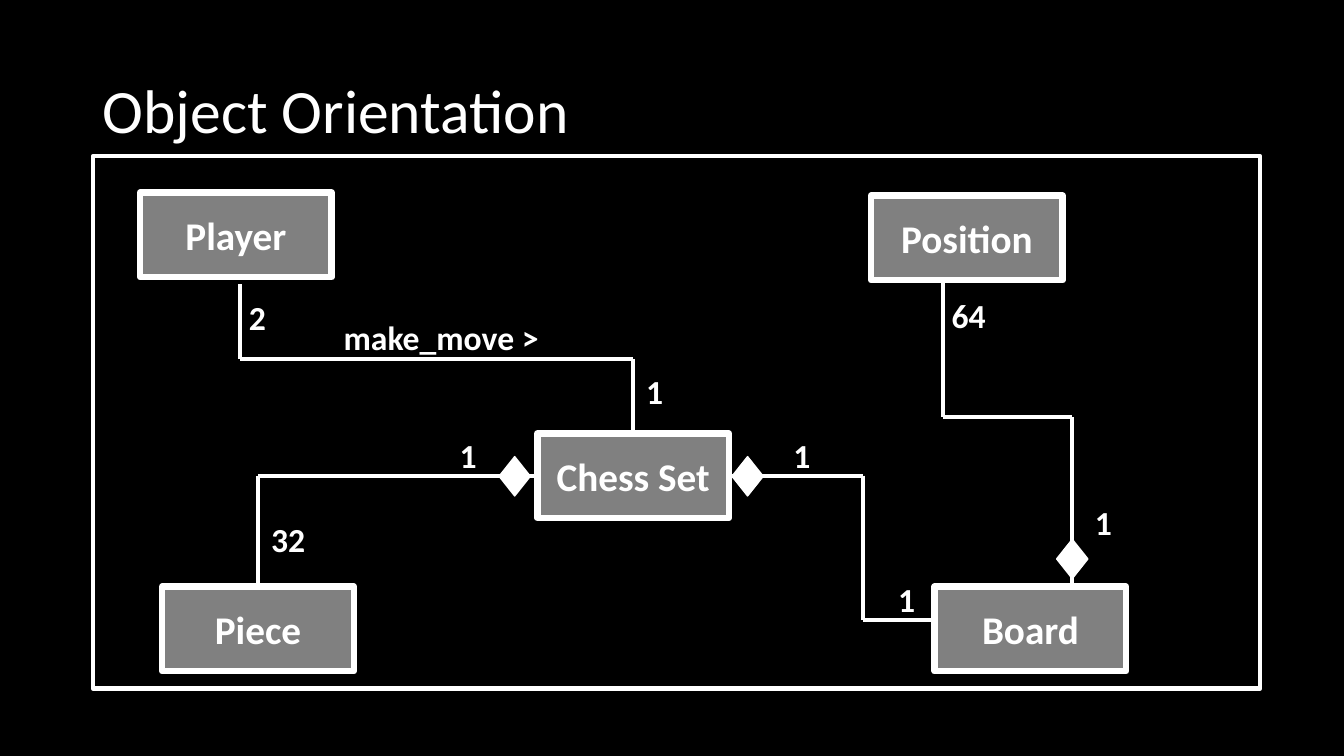
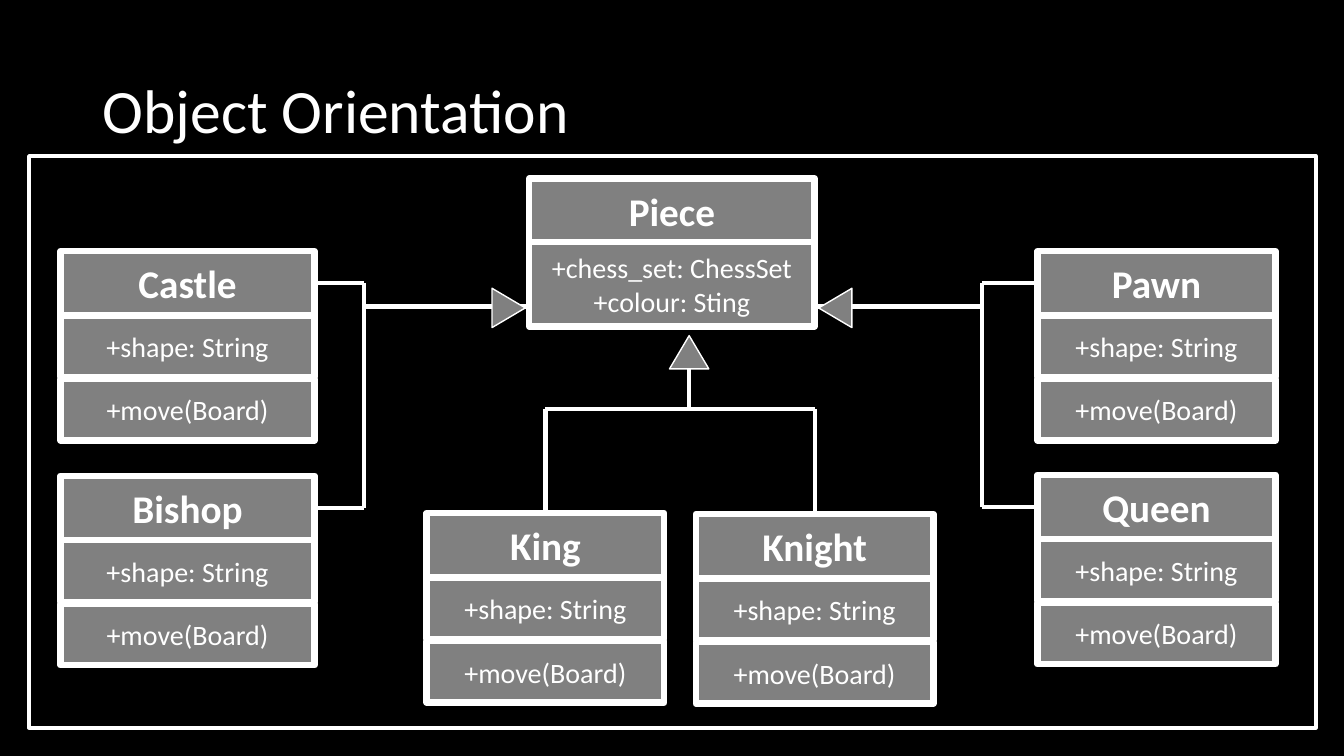
from lxml import etree
from pptx import Presentation
from pptx.dml.color import RGBColor
from pptx.enum.shapes import MSO_CONNECTOR, MSO_SHAPE as SHAPE
from pptx.enum.text import MSO_ANCHOR as ANCHOR, MSO_AUTO_SIZE as AUTO, PP_ALIGN as ALIGN
from pptx.oxml.ns import qn
from pptx.util import Inches, Pt

COLORS = {"back": "000000", "box": "808080", "ink": "FFFFFF"}
RGB = {name: RGBColor.from_string(code) for name, code in COLORS.items()}
FONT = "Calibri"
TOP, LEFT, BOTTOM, RIGHT = range(4)  # connection sites of a rectangle


def add_item(s, at, text="", shape=None, fill=None, line=4.5, size=28, bold=True, rotation=0):
    """Add a preset shape, or a plain label when no shape is given."""
    at = [Inches(v) for v in at]
    if shape is None:
        sp = s.shapes.add_textbox(*at)
    else:
        sp = s.shapes.add_shape(shape, *at)
        sp.shadow.inherit = False
        sp.rotation = rotation
        sp.line.color.rgb = RGB["ink"]
        sp.line.width = Pt(line)
        if fill:
            sp.fill.solid()
            sp.fill.fore_color.rgb = RGB[fill]
        else:
            sp.fill.background()
    if text:
        tf = sp.text_frame
        tf.word_wrap = shape is not None
        tf.auto_size = AUTO.NONE if shape else AUTO.SHAPE_TO_FIT_TEXT
        tf.vertical_anchor = ANCHOR.MIDDLE if shape else ANCHOR.TOP
        tf.text = text
        for p in tf.paragraphs:
            p.alignment = ALIGN.CENTER if shape else ALIGN.LEFT
            p.font.name, p.font.size, p.font.bold = FONT, Pt(size), bold
            p.font.color.rgb = RGB["ink"]
    return sp


def add_route(s, points, begin=None, end=None):
    """Join the points with straight lines; begin and end are (shape, site) pairs."""
    segments = []
    for (x1, y1), (x2, y2) in zip(points, points[1:]):
        c = s.shapes.add_connector(MSO_CONNECTOR.STRAIGHT, Inches(x1), Inches(y1),
                                   Inches(x2), Inches(y2))
        c.line.color.rgb = RGB["ink"]
        c.line.width = Pt(3)
        etree.SubElement(c._element.spPr, qn("a:effectLst"))
        segments.append(c)
    if begin:
        segments[0].begin_connect(*begin)
    if end:
        segments[-1].end_connect(*end)


prs = Presentation()
prs.slide_width, prs.slide_height = Inches(13.33), Inches(7.5)
background = prs.slide_master.background.fill
background.solid()
background.fore_color.rgb = RGB["back"]

# Title and frame on both slides
slides = []
for frame in [(0.92, 1.55, 11.58, 5.28), (0.29, 1.55, 12.76, 5.67)]:
    s = prs.slides.add_slide(prs.slide_layouts[5])
    title = s.shapes.title
    title.left, title.top = Inches(0.92), Inches(0.4)
    title.width, title.height = Inches(11.5), Inches(1.45)
    tf = title.text_frame
    tf.text = "Object Orientation"
    tf.auto_size = AUTO.NONE
    tf.vertical_anchor = ANCHOR.MIDDLE
    p = tf.paragraphs[0]
    p.alignment, p.line_spacing = ALIGN.LEFT, 0.9
    p.font.name, p.font.size = FONT, Pt(44)
    p.font.color.rgb = RGB["ink"]
    add_item(s, frame, shape=SHAPE.RECTANGLE, line=3)
    slides.append(s)
associations, inheritance = slides

# Slide 1: associations between the classes
s = associations
boxes = {}
for name, x, y in [("Player", 1.39, 1.91), ("Chess Set", 5.33, 4.3), ("Piece", 1.61, 5.82),
                   ("Board", 9.27, 5.82), ("Position", 8.64, 1.94)]:
    boxes[name] = add_item(s, (x, y, 1.9, 0.84), name, SHAPE.RECTANGLE, "box")

chess_set = boxes["Chess Set"]
add_route(s, [(2.38, 2.82), (2.38, 3.56), (6.28, 3.56), (6.28, 4.3)], end=(chess_set, TOP))
add_route(s, [(5.33, 4.72), (2.56, 4.72), (2.56, 5.82)],
          begin=(chess_set, LEFT), end=(boxes["Piece"], TOP))
add_route(s, [(7.23, 4.72), (8.56, 4.72), (8.56, 6.15), (9.27, 6.15)],
          begin=(chess_set, RIGHT))
add_route(s, [(9.35, 2.78), (9.35, 4.14), (10.63, 4.14), (10.63, 5.82)])

for x, y in [(4.95, 4.53), (7.26, 4.53), (10.48, 5.35)]:
    add_item(s, (x, y, 0.31, 0.39), shape=SHAPE.DIAMOND, fill="ink", line=1)

for text, x, y, width in [("2", 2.37, 2.9, 0.37), ("make_move >", 3.31, 3.09, 2.16),
                          ("1", 6.31, 3.63, 0.37), ("1", 4.46, 4.27, 0.37),
                          ("32", 2.59, 5.1, 0.54), ("1", 7.77, 4.27, 0.37),
                          ("1", 8.81, 5.69, 0.37), ("64", 9.34, 2.88, 0.54),
                          ("1", 10.76, 4.93, 0.37)]:
    add_item(s, (x, y, width, 0.5), text, size=24)

# Slide 2: pieces that inherit from Piece
s = inheritance
add_item(s, (5.25, 1.77, 2.83, 0.64), "Piece", SHAPE.RECTANGLE, "box")
add_item(s, (5.25, 2.4, 2.83, 0.84), "+chess_set: ChessSet\n+colour: Sting",
         SHAPE.RECTANGLE, "box", size=20, bold=False)

heads = {}
for name, x, y, width in [("Pawn", 10.29, 2.49, 2.36), ("Queen", 10.29, 4.71, 2.36),
                          ("Castle", 0.6, 2.49, 2.52), ("Bishop", 0.6, 4.72, 2.52),
                          ("Knight", 6.9, 5.1, 2.36), ("King", 4.23, 5.09, 2.36)]:
    heads[name] = add_item(s, (x, y, width, 0.64), name, SHAPE.RECTANGLE, "box")
    for dy, member in [(0.64, "+shape: String"), (1.27, "+move(Board)")]:
        add_item(s, (x, y + dy, width, 0.61), member, SHAPE.RECTANGLE, "box",
                 size=20, bold=False)

add_route(s, [(5.41, 5.09), (5.41, 4.06), (8.08, 4.06), (8.08, 5.1)],
          begin=(heads["King"], TOP), end=(heads["Knight"], TOP))
add_route(s, [(3.12, 2.81), (3.61, 2.81), (3.61, 5.04), (3.12, 5.04)],
          begin=(heads["Castle"], RIGHT), end=(heads["Bishop"], RIGHT))
add_route(s, [(10.29, 2.81), (9.74, 2.81), (9.74, 5.03), (10.29, 5.03)],
          begin=(heads["Pawn"], LEFT), end=(heads["Queen"], LEFT))
for stem in [[(6.83, 4.06), (6.83, 3.4)], [(3.61, 3.04), (5.25, 3.04)],
             [(9.74, 3.04), (8.08, 3.04)]]:
    add_route(s, stem)

for x, y, rotation in [(6.64, 3.33, 0), (4.85, 2.89, 90), (8.09, 2.89, 270)]:
    add_item(s, (x, y, 0.39, 0.33), shape=SHAPE.ISOSCELES_TRIANGLE, fill="box", line=1,
             rotation=rotation)

prs.save("out.pptx")
